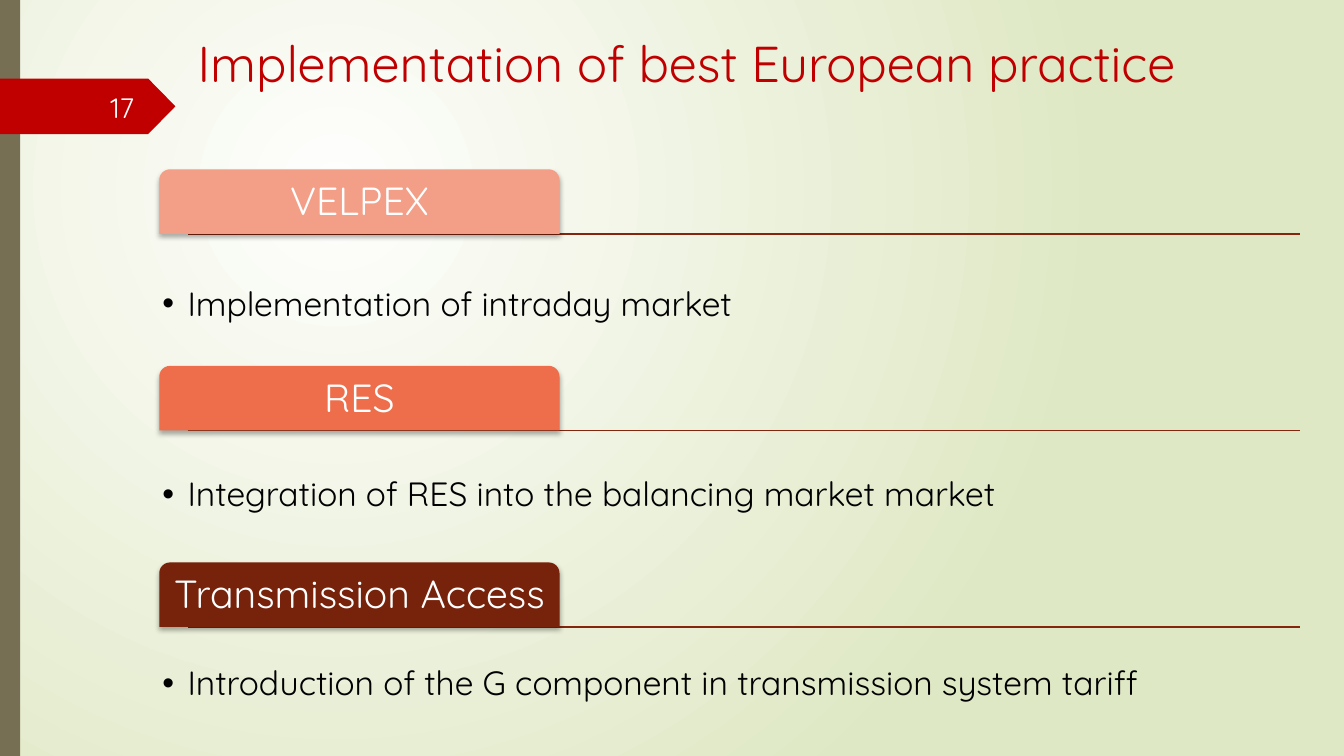
import pptx
import pptx.dml.color
import pptx.enum.shapes
import pptx.enum.text
import pptx.oxml
import pptx.oxml.ns
import pptx.util
from dataclasses import dataclass

Inches = pptx.util.Inches
Pt = pptx.util.Pt
Align = pptx.enum.text.PP_ALIGN
Anchor = pptx.enum.text.MSO_ANCHOR
Shapes = pptx.enum.shapes.MSO_SHAPE


@dataclass(frozen=True)
class Theme:
    font: str = "Quicksand"
    red: str = "C00000"
    olive: str = "766F54"
    rule: str = "84260D"
    white: str = "FFFFFF"
    black: str = "000000"
    glow: str = "FEFEFD"
    green: str = "DFE8C4"
    title_size: int = 36
    tag_size: int = 28
    body_size: int = 24
    number_size: int = 20


THEME = Theme()
SECTIONS = [
    ("VELPEX", "F39E87", "Implementation of intraday market", 0.53),
    ("RES", "EE6E4B", "Integration of RES into the balancing market market", 0.47),
    ("Transmission Access", "77220B",
     "Introduction of the G component in transmission system tariff", 0.39),
]
SECTION_TOP, SECTION_PITCH = 1.68, 1.95


def rgb(color):
    return pptx.dml.color.RGBColor.from_string(color)


def parse_drawing(xml):
    return pptx.oxml.parse_xml(xml.replace(">", f" {pptx.oxml.ns.nsdecls('a', 'p')}>", 1))


def place(shape, left, top, width, height):
    shape.left, shape.top = Inches(left), Inches(top)
    shape.width, shape.height = Inches(width), Inches(height)


def write_text(shape, text, *, size, color, align=Align.LEFT, anchor=Anchor.TOP,
               insets=(0.1, 0.05, 0.1, 0.05), line_spacing=1.0):
    frame = shape.text_frame
    frame.word_wrap = True
    frame.auto_size = pptx.enum.text.MSO_AUTO_SIZE.NONE
    frame.vertical_anchor = anchor
    (frame.margin_left, frame.margin_top,
     frame.margin_right, frame.margin_bottom) = map(Inches, insets)
    paragraph = frame.paragraphs[0]
    paragraph.alignment = align
    paragraph.line_spacing = line_spacing
    paragraph.space_before = paragraph.space_after = Pt(0)
    run = paragraph.add_run()
    run.text = text
    run.font.name = THEME.font
    run.font.size = Pt(size)
    run.font.bold = False
    run.font.color.rgb = rgb(color)
    return paragraph


def paint(shape, color):
    shape.shadow.inherit = False
    shape.fill.solid()
    shape.fill.fore_color.rgb = rgb(color)
    shape.line.fill.background()


def add_background(slide):
    slide.background.fill.solid()
    properties = slide.background._cSld.bg.bgPr
    properties.replace(properties[0], parse_drawing(
        '<a:gradFill rotWithShape="1"><a:gsLst>'
        f'<a:gs pos="0"><a:srgbClr val="{THEME.glow}"/></a:gs>'
        f'<a:gs pos="100000"><a:srgbClr val="{THEME.green}"/></a:gs></a:gsLst>'
        '<a:path path="circle"><a:fillToRect l="50000" t="50000" r="100000" b="100000"/>'
        '</a:path></a:gradFill>'))


def add_side_bar(slide, left, top, width, height):
    bar = slide.shapes.add_shape(Shapes.RECTANGLE, *map(Inches, (left, top, width, height)))
    paint(bar, THEME.olive)


def add_page_badge(slide, number, left, top, width, height):
    shoulder = left + width - 0.27
    builder = slide.shapes.build_freeform(Inches(left), Inches(top))
    builder.add_line_segments([
        (Inches(x), Inches(y)) for x, y in (
            (shoulder, top), (left + width, top + height / 2),
            (shoulder, top + height), (left, top + height))])
    paint(builder.convert_to_shape(), THEME.red)
    label = slide.shapes.add_textbox(
        *map(Inches, (left + 0.58, top + 0.08, 0.85, 0.4)))
    write_text(label, number, size=THEME.number_size, color=THEME.white,
               align=Align.RIGHT, anchor=Anchor.MIDDLE)


def add_title(slide, text, left, top, width, height):
    title = slide.shapes.title
    place(title, left, top, width, height)
    write_text(title, text, size=THEME.title_size, color=THEME.red)


def add_rule(slide, left, top, width):
    rule = slide.shapes.add_connector(
        pptx.enum.shapes.MSO_CONNECTOR.STRAIGHT,
        *map(Inches, (left, top, left + width, top)))
    rule.line.color.rgb = rgb(THEME.rule)
    rule.line.width = Pt(1.25)
    rule._element.spPr.append(parse_drawing('<a:effectLst></a:effectLst>'))


def add_tag(slide, text, color, left, top, width, height):
    tag = slide.shapes.add_shape(
        Shapes.ROUND_2_SAME_RECTANGLE, *map(Inches, (left, top, width, height)))
    paint(tag, color)
    tag._element.spPr.find(pptx.oxml.ns.qn("a:effectLst")).append(parse_drawing(
        f'<a:outerShdw blurRad="{Pt(3.5)}" dist="{Pt(2.2)}" dir="5400000" rotWithShape="0">'
        f'<a:srgbClr val="{THEME.black}"><a:alpha val="32000"/></a:srgbClr></a:outerShdw>'))
    write_text(tag, text, size=THEME.tag_size, color=THEME.white, align=Align.CENTER,
               anchor=Anchor.MIDDLE, insets=(0.06,) * 4, line_spacing=0.9)


def add_bullet(body, text, text_offset, left, top, width, height):
    place(body, left, top, width, height)
    paragraph = write_text(body, text, size=THEME.body_size, color=THEME.black,
                           insets=(0.03, text_offset, 0.03, 0.03), line_spacing=0.9)
    properties = paragraph._p.get_or_add_pPr()
    properties.set("marL", str(Inches(0.25)))
    properties.set("indent", str(-Inches(0.25)))
    properties.append(parse_drawing('<a:buFont typeface="Arial"></a:buFont>'))
    properties.append(parse_drawing('<a:buChar char="•"></a:buChar>'))


def add_section(slide, body, section, left, top, width):
    tag_text, color, bullet_text, text_offset = section
    tag_height = 0.64
    rule_top = top + tag_height
    add_rule(slide, left + 0.28, rule_top, width - 0.28)
    add_tag(slide, tag_text, color, left, top, 3.97, tag_height)
    add_bullet(body, bullet_text, text_offset, left, rule_top, 11.03, 1.28)


def main():
    presentation = pptx.Presentation()
    presentation.slide_width = Inches(13.33)
    presentation.slide_height = Inches(7.5)
    slide = presentation.slides.add_slide(
        presentation.slide_layouts.get_by_name("Comparison"))
    bodies = list(slide.placeholders)[1:]
    add_background(slide)
    add_side_bar(slide, 0, 0, 0.2, 7.5)
    add_page_badge(slide, "17", 0, 0.78, 1.74, 0.55)
    add_title(slide, "Implementation of best European practice", 1.86, 0.27, 11.26, 0.71)
    for index, (body, section) in enumerate(zip(bodies, SECTIONS)):
        add_section(slide, body, section, 1.58, SECTION_TOP + index * SECTION_PITCH, 11.31)
    for spare in bodies[len(SECTIONS):]:
        spare._element.getparent().remove(spare._element)
    presentation.save("out.pptx")


if __name__ == "__main__":
    main()
